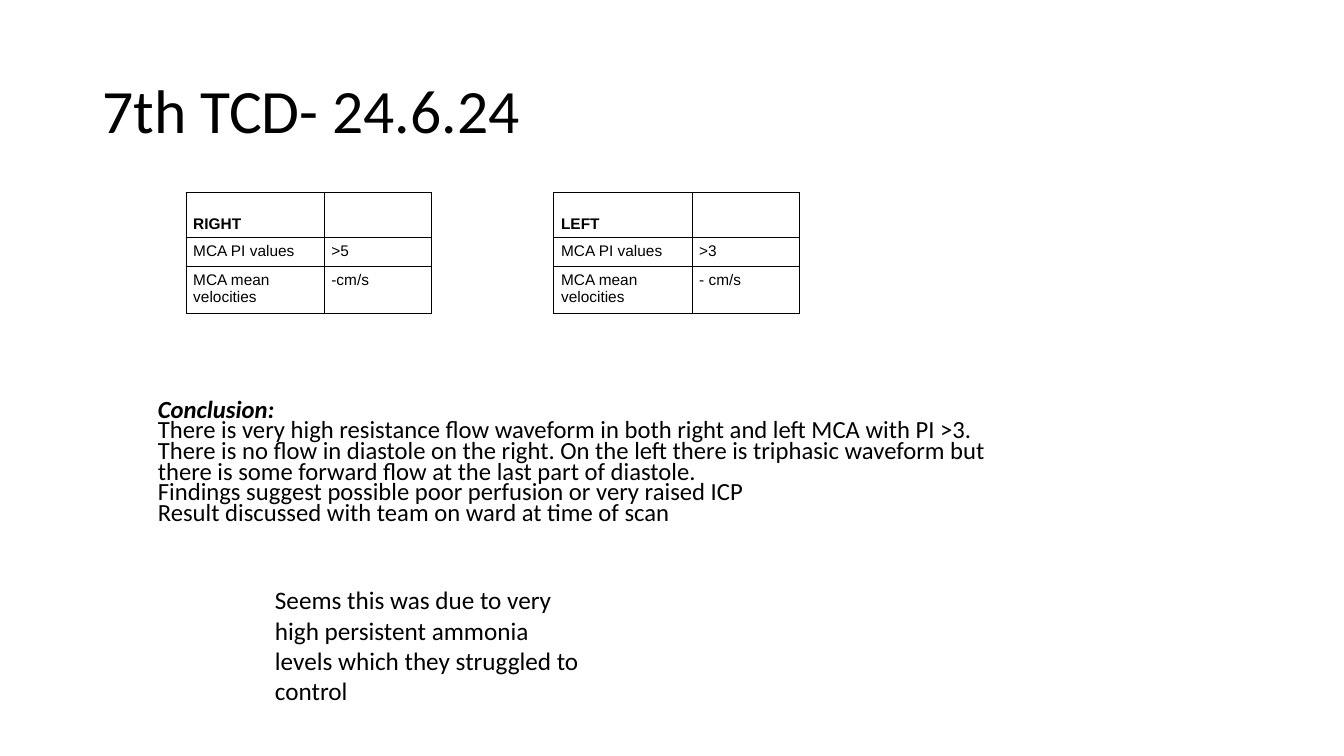
from lxml.etree import SubElement
from pptx import Presentation
from pptx.dml.color import RGBColor
from pptx.enum.text import MSO_ANCHOR
from pptx.oxml.ns import qn
from pptx.util import Cm, Pt

COLORS = {"text": "000000", "border": "000000", "cell": "FFFFFF"}
COLUMN_WIDTHS = (3.48, 2.71)
ROW_HEIGHTS = (1.14, 0.69, 1.12)


def format_paragraph(p, size, font, bold=False, italic=False):
    for r in p.runs:
        r.font.size = Pt(size)
        r.font.name = font
        r.font.bold = bold
        r.font.italic = italic
        r.font.color.rgb = RGBColor.from_string(COLORS["text"])


def add_text(s, left, top, width, height, lines, size,
             spacing=1.0, anchor=MSO_ANCHOR.TOP):
    sp = s.shapes.add_textbox(Cm(left), Cm(top), Cm(width), Cm(height))
    tf = sp.text_frame
    tf.word_wrap = True
    tf.vertical_anchor = anchor
    tf.text = "\n".join(lines)
    for p in tf.paragraphs:
        p.line_spacing = spacing
        format_paragraph(p, size, "Calibri")
    return tf


def add_borders(cell):
    tc_pr = cell._tc.get_or_add_tcPr()
    for position, side in enumerate(("lnL", "lnR", "lnT", "lnB")):
        ln = SubElement(tc_pr, qn(f"a:{side}"), w=str(Pt(0.75)))
        fill = SubElement(ln, qn("a:solidFill"))
        SubElement(fill, qn("a:srgbClr"), val=COLORS["border"])
        tc_pr.insert(position, ln)


def fill_cell(cell, text, header):
    cell.margin_left = cell.margin_right = Cm(0.18)
    cell.margin_top = cell.margin_bottom = Cm(0.13)
    cell.vertical_anchor = MSO_ANCHOR.BOTTOM if header else MSO_ANCHOR.TOP
    cell.fill.solid()
    cell.fill.fore_color.rgb = RGBColor.from_string(COLORS["cell"])
    cell.text_frame.text = text
    format_paragraph(cell.text_frame.paragraphs[0], 11, "Arial", bold=header)
    add_borders(cell)


def add_mca_table(s, left, side, pi_value, velocity):
    rows = ((side, ""), ("MCA PI values", pi_value),
            ("MCA mean velocities", velocity))
    table = s.shapes.add_table(
        len(ROW_HEIGHTS), len(COLUMN_WIDTHS), Cm(left), Cm(4.85),
        Cm(sum(COLUMN_WIDTHS)), Cm(sum(ROW_HEIGHTS))).table
    table.horz_banding = False
    table.first_row = False
    for column, width in zip(table.columns, COLUMN_WIDTHS):
        column.width = Cm(width)
    for i, (row, height) in enumerate(zip(table.rows, ROW_HEIGHTS)):
        row.height = Cm(height)
        for cell, text in zip(row.cells, rows[i]):
            fill_cell(cell, text, header=i == 0)


def main():
    prs = Presentation()
    prs.slide_width, prs.slide_height = Cm(33.87), Cm(19.05)
    s = prs.slides.add_slide(prs.slide_layouts[6])

    add_text(s, 2.33, 1.01, 29.21, 3.68, ["7th TCD- 24.6.24"], 44,
             0.9, MSO_ANCHOR.MIDDLE)
    conclusion = add_text(s, 3.73, 9.96, 22.25, 3.45, [
        "Conclusion:",
        "There is very high resistance flow waveform in both right and left "
        "MCA with PI >3.",
        "There is no flow in diastole on the right. On the left there is "
        "triphasic waveform but there is some forward flow at the last part "
        "of diastole.",
        "Findings suggest possible poor perfusion or very raised ICP",
        "Result discussed with team on ward at time of scan",
    ], 17.6, 0.7, MSO_ANCHOR.MIDDLE)
    format_paragraph(conclusion.paragraphs[0], 17.6, "Calibri", True, True)

    add_mca_table(s, 4.69, "RIGHT", ">5", "-cm/s")
    add_mca_table(s, 13.96, "LEFT", ">3", "- cm/s")

    add_text(s, 6.68, 14.61, 8.46, 3.33, [
        "Seems this was due to very high persistent ammonia levels which "
        "they struggled to control"], 18)

    prs.save("out.pptx")


if __name__ == "__main__":
    main()
